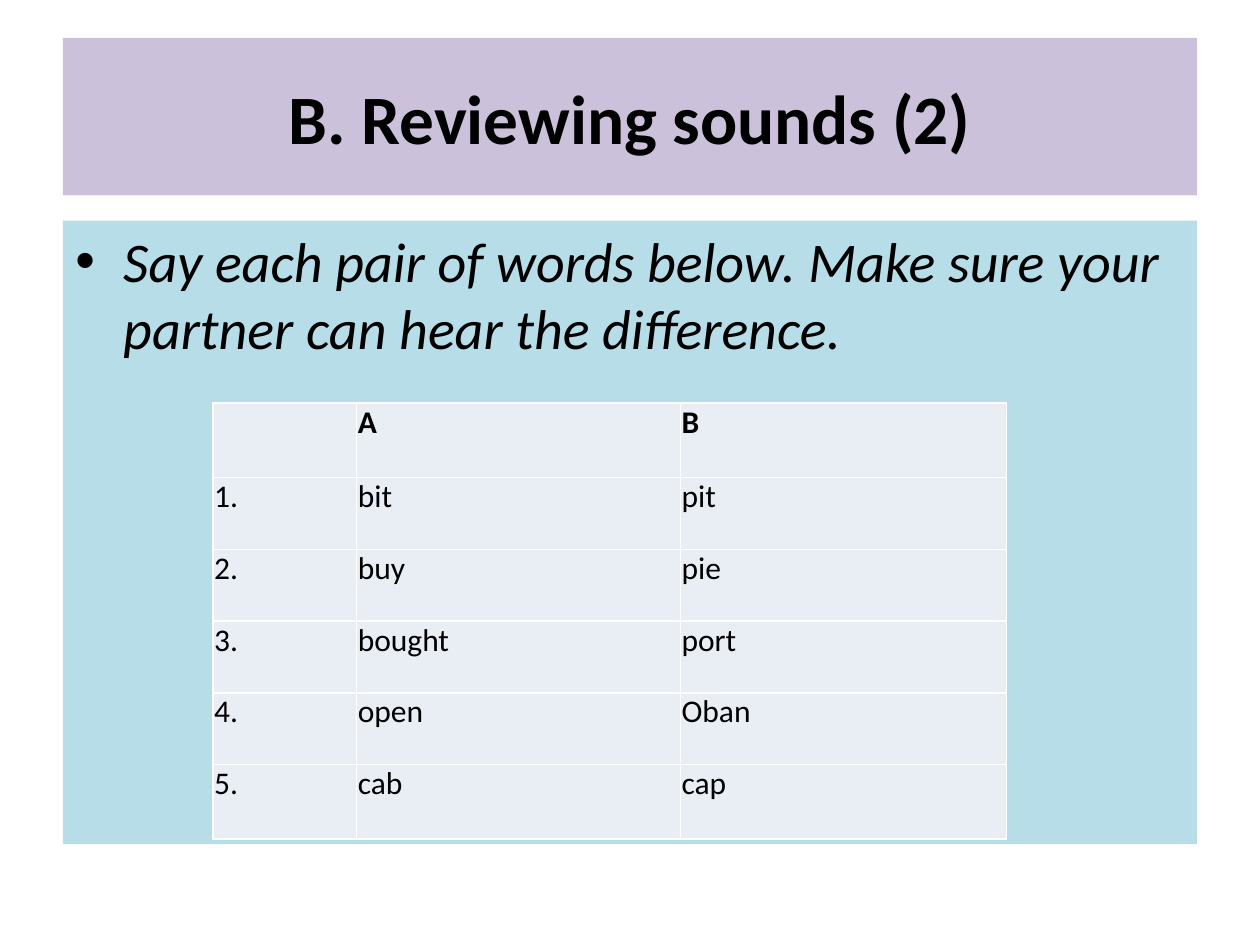
from lxml.etree import SubElement
from pptx import Presentation
from pptx.dml.color import RGBColor
from pptx.enum.shapes import MSO_SHAPE
from pptx.enum.text import MSO_ANCHOR, PP_ALIGN
from pptx.oxml import parse_xml
from pptx.oxml.ns import qn
from pptx.util import Inches, Pt

TITLE = "B. Reviewing sounds (2)"
TASK = "Say each pair of words below. Make sure your partner can hear the difference."
HEADINGS = ("", "A", "Β")
PAIRS = [("bit", "pit"), ("buy", "pie"), ("bought", "port"), ("open", "Oban"), ("cab", "cap")]
COLORS = {"title": "CCC1DA", "body": "B7DEE8", "cell": "E9EDF4", "border": "FFFFFF", "text": "000000"}
FONT = "Calibri"
WIDTH, HEIGHT = 10, 7.5
MARGIN = WIDTH * 0.05
COLUMNS = (1.14, 2.57, 2.59)
ROWS = (0.59, 0.57, 0.57, 0.57, 0.57, 0.59)
DRAWING = "http://schemas.openxmlformats.org/drawingml/2006/main"


def set_fill(target, color):
    target.fill.solid()
    target.fill.fore_color.rgb = RGBColor.from_string(COLORS[color])


def write(para, text, size, bold=False, italic=False):
    para.text = text
    font = para.font
    font.name, font.size, font.bold, font.italic = FONT, Pt(size), bold, italic
    font.color.rgb = RGBColor.from_string(COLORS["text"])


def add_panel(page, top, height, color, anchor, align):
    box = page.shapes.add_shape(MSO_SHAPE.RECTANGLE, Inches(MARGIN), Inches(top),
                                Inches(WIDTH - 2 * MARGIN), Inches(height))
    box.shadow.inherit = False
    box.line.fill.background()
    set_fill(box, color)
    box.text_frame.word_wrap = True
    box.text_frame.vertical_anchor = anchor
    para = box.text_frame.paragraphs[0]
    para.alignment = align
    return para


def add_bullet(para):
    properties = para._p.get_or_add_pPr()
    properties.set("marL", str(Inches(0.38)))
    properties.set("indent", str(-Inches(0.38)))
    SubElement(properties, qn("a:buFont"), typeface="Arial")
    SubElement(properties, qn("a:buChar"), char="•")


def add_borders(cell):
    for position, side in enumerate(("lnL", "lnR", "lnT", "lnB")):
        line = parse_xml(f'<a:{side} xmlns:a="{DRAWING}" w="{Pt(1)}"><a:solidFill>'
                         f'<a:srgbClr val="{COLORS["border"]}"/></a:solidFill></a:{side}>')
        cell._tc.get_or_add_tcPr().insert(position, line)


def add_word_table(page):
    table = page.shapes.add_table(len(ROWS), len(COLUMNS), Inches(1.69), Inches(3.2),
                                  Inches(sum(COLUMNS)), Inches(sum(ROWS))).table
    for column, width in zip(table.columns, COLUMNS):
        column.width = Inches(width)
    for row, height in zip(table.rows, ROWS):
        row.height = Inches(height)
    lines = [HEADINGS] + [(f"{number}.", *pair) for number, pair in enumerate(PAIRS, 1)]
    for row, words in enumerate(lines):
        for column, word in enumerate(words):
            cell = table.cell(row, column)
            cell.margin_left = cell.margin_right = Inches(0.01)
            cell.margin_top = cell.margin_bottom = 0
            set_fill(cell, "cell")
            add_borders(cell)
            write(cell.text_frame.paragraphs[0], word, 18, bold=row == 0)


def main():
    deck = Presentation()
    deck.slide_width, deck.slide_height = Inches(WIDTH), Inches(HEIGHT)
    page = deck.slides.add_slide(deck.slide_layouts[6])
    title = add_panel(page, 0.3, 1.25, "title", MSO_ANCHOR.MIDDLE, PP_ALIGN.CENTER)
    write(title, TITLE, 39.6, bold=True)
    task = add_panel(page, 1.75, 4.95, "body", MSO_ANCHOR.TOP, PP_ALIGN.LEFT)
    task.space_before = Pt(6.4)
    write(task, TASK, 32, italic=True)
    bullet_para = task
    properties = bullet_para._p.get_or_add_pPr()
    defaults = properties.find(qn("a:defRPr"))
    add_bullet(bullet_para)
    properties.append(defaults)
    add_word_table(page)
    deck.save("out.pptx")


if __name__ == "__main__":
    main()
